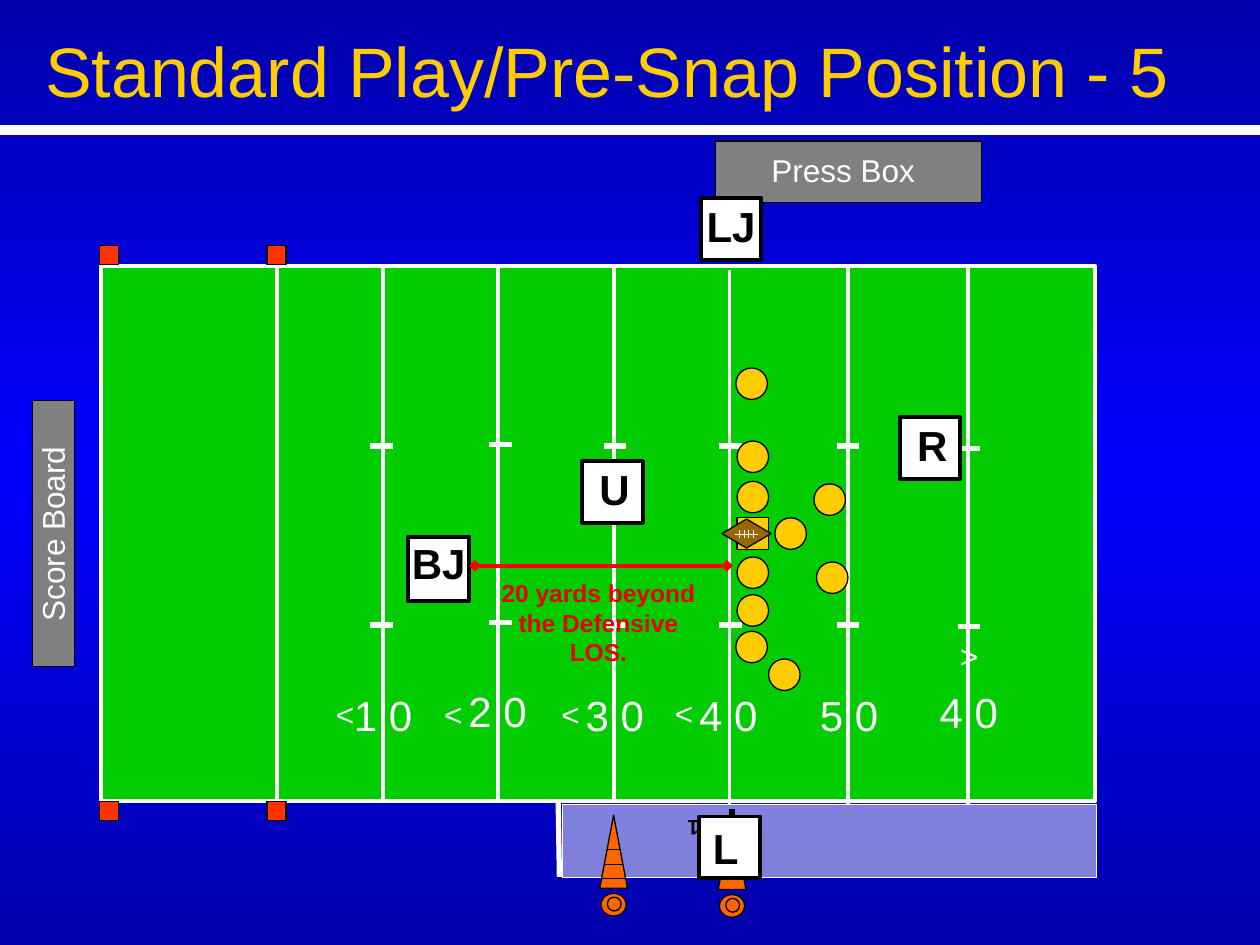
"""Build the football officials' pre-snap position slide."""
from copy import deepcopy

from lxml.etree import SubElement
from pptx import Presentation
from pptx.dml.color import RGBColor
from pptx.enum.dml import MSO_LINE
from pptx.enum.shapes import MSO_CONNECTOR, MSO_SHAPE
from pptx.enum.text import MSO_AUTO_SIZE, PP_ALIGN
from pptx.oxml.ns import qn
from pptx.util import Inches, Pt

WHITE, BLACK, GRAY = "FFFFFF", "000000", "808080"
GOLD, ORANGE = "FFCC00", "FF6600"
LEFT, CENTER, RIGHT = PP_ALIGN.LEFT, PP_ALIGN.CENTER, PP_ALIGN.RIGHT
RECTANGLE, OVAL = MSO_SHAPE.RECTANGLE, MSO_SHAPE.OVAL

presentation = Presentation()
presentation.slide_width = Inches(10)
presentation.slide_height = Inches(7.5)
slide = presentation.slides.add_slide(presentation.slide_layouts[6])


def draw_shape(kind, left, top, width, height, fill, line=BLACK, weight=0.75):
    shape = slide.shapes.add_shape(
        kind, Inches(left), Inches(top), Inches(width), Inches(height))
    shape.shadow.inherit = False
    if fill:
        shape.fill.solid()
        shape.fill.fore_color.rgb = RGBColor.from_string(fill)
    else:
        shape.fill.background()
    shape.line.color.rgb = RGBColor.from_string(line)
    shape.line.width = Pt(weight)
    return shape


def draw_line(x1, y1, x2, y2, color=WHITE, weight=2.25):
    line = slide.shapes.add_connector(
        MSO_CONNECTOR.STRAIGHT, Inches(x1), Inches(y1), Inches(x2), Inches(y2))
    line.line.color.rgb = RGBColor.from_string(color)
    line.line.width = Pt(weight)
    SubElement(line._element.spPr, qn("a:effectLst"))
    return line


background = slide.background.fill
background.gradient()
background.gradient_angle = 270
stop_list = slide._element.find(".//" + qn("a:gsLst"))
stop_list.append(deepcopy(stop_list[0]))
for stop, position, color in zip(
        background.gradient_stops, (0, 0.5, 1), ("0000AA", "0000FF", "0000AA")):
    stop.position = position
    stop.color.rgb = RGBColor.from_string(color)

press_box = draw_shape(RECTANGLE, 6.49, 0.31, 0.49, 2.11, GRAY)
press_box.rotation = 270
draw_line(0, 1.03, 10, 1.03, weight=6)

draw_shape(RECTANGLE, 0.8, 2.11, 7.89, 4.25, "00CC00", WHITE, 2.25)
for x, top in ((2.2, 2.11), (3.04, 2.11), (3.95, 2.11), (4.87, 2.11),
               (5.79, 2.14), (6.73, 2.13), (7.68, 2.13)):
    draw_line(x, top, x, top + 4.25)
for left in (2.12, 0.79):
    for top in (1.95, 6.36):
        draw_shape(RECTANGLE, left, top, 0.15, 0.15, "FF3300")

draw_line(4.43, 6.36, 4.44, 6.96, weight=3)
team_box = draw_shape(RECTANGLE, 4.46, 6.38, 4.24, 0.58, WHITE, WHITE, 0.25)
team_box.line.dash_style = MSO_LINE.ROUND_DOT
team_box_color = team_box._element.spPr.find(".//" + qn("a:srgbClr"))
SubElement(team_box_color, qn("a:alpha"), val="50000")

for left, upper, lower in ((2.94, 3.54, 4.96), (3.88, 3.53, 4.94),
                           (4.79, 3.54, 4.96), (5.71, 3.54, 4.96),
                           (6.64, 3.54, 4.96), (7.6, 3.56, 4.97)):
    for y in (upper, lower):
        draw_line(left, y, left + 0.18, y, weight=3)

for center, top, stripes in ((5.81, 6.48, ((0.5, 0.09),)),
                             (4.87, 6.47, ((0.39, 0.07), (0.5, 0.09), (0.27, 0.05)))):
    draw_shape(MSO_SHAPE.ISOSCELES_TRIANGLE, center - 0.11, top, 0.22, 0.58, ORANGE)
    draw_shape(OVAL, center - 0.1, top + 0.62, 0.2, 0.18, ORANGE)
    for drop, half_width in stripes:
        draw_line(center - half_width, top + drop, center + half_width, top + drop,
                  BLACK, 0.75)
    draw_shape(OVAL, center - 0.05, top + 0.65, 0.11, 0.11, None)
draw_shape(RECTANGLE, 5.72, 6.78, 0.17, 0.18, "C0C0C0", BLACK, 2.25)
draw_line(5.81, 6.42, 5.81, 6.77, BLACK, 3)

draw_shape(RECTANGLE, 0.26, 3.18, 0.33, 2.11, GRAY)

for left, top, height in ((4.62, 3.66, 0.49), (5.55, 6.48, 0.49), (5.56, 1.57, 0.49),
                          (3.24, 4.26, 0.51), (7.14, 3.31, 0.49)):
    draw_shape(RECTANGLE, left, top, 0.48, height, WHITE, BLACK, 2.25)

draw_shape(RECTANGLE, 5.85, 4.11, 0.25, 0.25, GOLD)
for left, top in ((5.85, 3.82), (5.85, 3.5), (5.85, 4.42), (5.85, 4.72), (6.15, 4.11),
                  (6.1, 5.23), (5.84, 5.01), (5.84, 2.92), (6.46, 3.84), (6.48, 4.46)):
    draw_shape(OVAL, left, top, 0.25, 0.25, GOLD)

draw_shape(MSO_SHAPE.FLOWCHART_DECISION, 5.73, 4.12, 0.39, 0.23, "996600")
draw_line(5.83, 4.24, 6.02, 4.24, weight=0.75)
for x in (5.87, 5.91, 5.94, 5.98):
    draw_line(x, 4.21, x, 4.27, weight=0.75)

distance = draw_line(3.77, 4.49, 5.77, 4.49, "FF0000")
for end in ("a:headEnd", "a:tailEnd"):
    SubElement(distance.line._get_or_add_ln(), qn(end), type="diamond")

labels = [
    ("Standard Play/Pre-Snap Position - 5", 0.26, 0.17, 9.3, 0.77, 40, GOLD, False, LEFT, 0),
    ("Press Box", 6.02, 1.15, 1.34, 0.4, 18, WHITE, False, RIGHT, 0),
    ("Score Board", -0.38, 4.04, 1.59, 0.4, 18, WHITE, False, RIGHT, 270),
    ("1", 5.36, 6.43, 0.29, 0.3, 12, BLACK, True, LEFT, 180),
    ("20 yards beyond the Defensive LOS.", 3.8, 4.54, 1.9, 0.81, 14, "EA0000", True, CENTER, 0),
]
for text, left, top in (("1 0", 2.61, 5.42), ("2 0", 3.52, 5.39), ("3 0", 4.45, 5.42),
                        ("4 0", 5.35, 5.42), ("5 0", 6.31, 5.42), ("4 0", 7.26, 5.4)):
    labels.append((text, left, top, 0.76, 0.5, 24, WHITE, False, RIGHT, 0))
for left, top, rotation in ((2.56, 5.47, 0), (3.42, 5.47, 0), (4.35, 5.47, 0),
                            (5.25, 5.46, 0), (7.52, 5.04, 180)):
    labels.append(("<", left, top, 0.35, 0.4, 18, WHITE, False, RIGHT, rotation))
for text, left, top, width in (("U", 4.66, 3.63, 0.5), ("L", 5.56, 6.48, 0.5),
                               ("LJ", 5.51, 1.54, 0.76), ("BJ", 3.17, 4.22, 0.66),
                               ("R", 7.18, 3.28, 0.5)):
    labels.append((text, left, top, width, 0.5, 24, BLACK, True, LEFT, 0))

for text, left, top, width, height, size, color, bold, alignment, rotation in labels:
    label = slide.shapes.add_textbox(
        Inches(left), Inches(top), Inches(width), Inches(height))
    label.rotation = rotation
    label.text_frame.text = text
    label.text_frame.word_wrap = text not in ("Press Box", "<", "1")
    label.text_frame.auto_size = MSO_AUTO_SIZE.SHAPE_TO_FIT_TEXT
    paragraph = label.text_frame.paragraphs[0]
    paragraph.alignment = alignment
    font = paragraph.runs[0].font
    font.name = "Arial"
    font.size = Pt(size)
    font.bold = bold
    font.color.rgb = RGBColor.from_string(color)

presentation.save("out.pptx")
